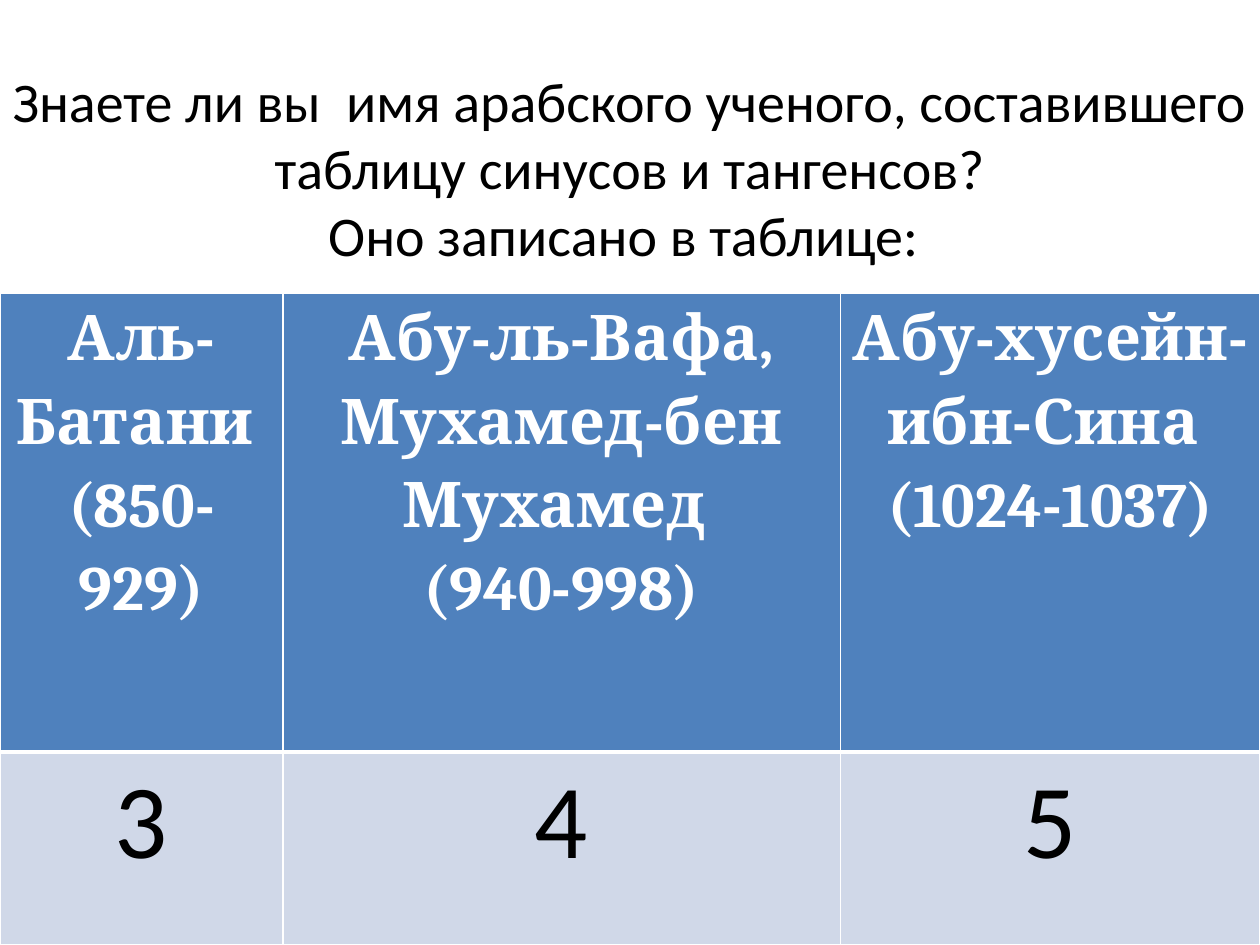
from lxml.etree import SubElement
from pptx import Presentation
from pptx.dml.color import RGBColor
from pptx.enum.text import MSO_ANCHOR, PP_ALIGN
from pptx.oxml.ns import qn
from pptx.util import Cm, Pt

COLORS = {"text": "000000", "header": "4F81BD", "answer": "D0D8E8", "white": "FFFFFF"}
QUESTION = [
    "Знаете ли вы  имя арабского ученого, составившего таблицу синусов и тангенсов?",
    "Оно записано в таблице: ",
]
SCHOLARS = [
    ["Аль-Батани ", "(850-929)"],
    ["Абу-ль-Вафа, Мухамед-бен Мухамед ", "(940-998)"],
    ["Абу-хусейн-ибн-Сина ", "(1024-1037)"],
]
ANSWERS = [["3"], ["4"], ["5"]]
COL_WIDTHS = [5.7, 11.24, 8.46]
ROWS = [
    dict(height=9.25, cells=SCHOLARS, fill="header", border=3, inset=(0.18, 0),
         font=("Cambria", 36, "white", True), spacing=1.15),
    dict(height=3.89, cells=ANSWERS, fill="answer", border=1, inset=(0.25, 0.13),
         font=("Calibri", 60, "text", False), spacing=1),
]


def add_run(p, text, name, size, color, bold=False):
    r = p.add_run()
    r.text = text
    r.font.name, r.font.size, r.font.bold = name, Pt(size), bold
    r.font.color.rgb = RGBColor.from_string(COLORS[color])


def set_borders(cell, bottom):
    """White cell borders, 1 pt wide except for the bottom one."""
    tcPr = cell._tc.get_or_add_tcPr()
    for side, width in (("L", 1), ("R", 1), ("T", 1), ("B", bottom)):
        ln = SubElement(tcPr, qn(f"a:ln{side}"), w=str(Pt(width)))
        fill = SubElement(ln, qn("a:solidFill"))
        SubElement(fill, qn("a:srgbClr"), val=COLORS["white"])


def add_question(s):
    tf = s.shapes.add_textbox(0, Cm(0.76), Cm(25.4), Cm(6.17)).text_frame
    tf.word_wrap = True
    tf.vertical_anchor = MSO_ANCHOR.MIDDLE
    tf.margin_bottom = Cm(1.07)
    for i, line in enumerate(QUESTION):
        p = tf.add_paragraph() if i else tf.paragraphs[0]
        p.alignment = PP_ALIGN.CENTER
        add_run(p, line, "Calibri", 32, "text")


def fill_cell(cell, lines, row):
    set_borders(cell, row["border"])
    cell.fill.solid()
    cell.fill.fore_color.rgb = RGBColor.from_string(COLORS[row["fill"]])
    side, end = row["inset"]
    cell.margin_left = cell.margin_right = Cm(side)
    cell.margin_top = cell.margin_bottom = Cm(end)
    tf = cell.text_frame
    for i, line in enumerate(lines):
        p = tf.add_paragraph() if i else tf.paragraphs[0]
        p.alignment = PP_ALIGN.CENTER
        p.line_spacing = row["spacing"]
        add_run(p, line, *row["font"])


def add_answer_table(s):
    height = sum(row["height"] for row in ROWS)
    table = s.shapes.add_table(len(ROWS), len(COL_WIDTHS), 0, Cm(5.91),
                               Cm(sum(COL_WIDTHS)), Cm(height)).table
    for col, width in zip(table.columns, COL_WIDTHS):
        col.width = Cm(width)
    for i, row in enumerate(ROWS):
        table.rows[i].height = Cm(row["height"])
        for j, lines in enumerate(row["cells"]):
            fill_cell(table.cell(i, j), lines, row)


def main():
    prs = Presentation()
    prs.slide_width, prs.slide_height = Cm(25.4), Cm(19.05)
    s = prs.slides.add_slide(prs.slide_layouts[6])
    add_question(s)
    add_answer_table(s)
    prs.save("out.pptx")


if __name__ == "__main__":
    main()
